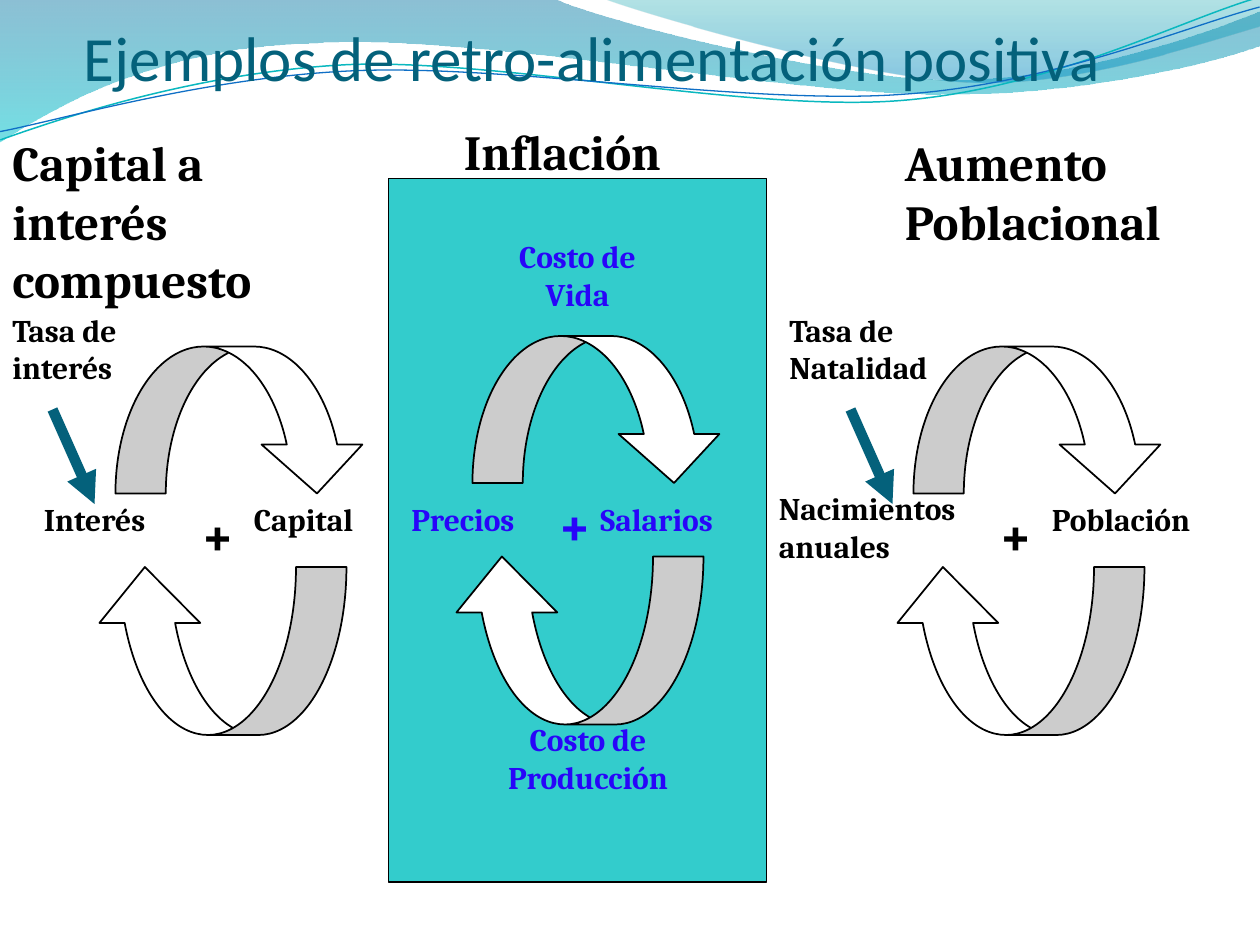
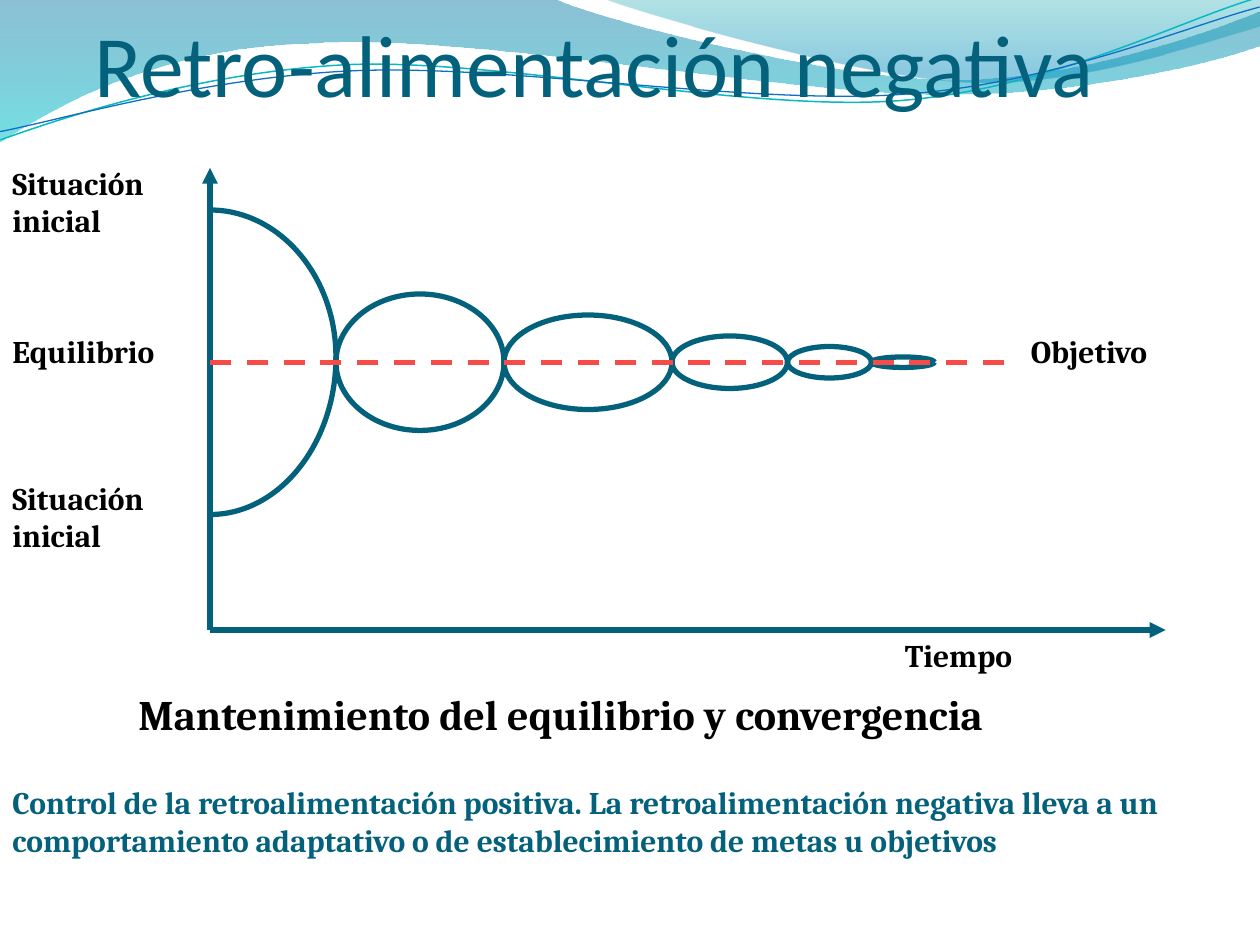
"""Build two slides on positive and negative feedback loops."""
from dataclasses import dataclass

from lxml.etree import SubElement
from pptx import Presentation
from pptx.dml.color import RGBColor
from pptx.enum.dml import MSO_LINE
from pptx.enum.shapes import MSO_CONNECTOR as Connector, MSO_SHAPE as Preset
from pptx.enum.text import MSO_ANCHOR as Anchor, PP_ALIGN as Align
from pptx.oxml.ns import qn
from pptx.util import Pt

EMU_PER_PX = 7620
ROUNDNESS = 0.55


@dataclass(frozen=True)
class Theme:
    """Colours, fonts and type sizes."""
    teal: str = "04617B"
    black: str = "000000"
    white: str = "FFFFFF"
    panel: str = "33CCCC"
    violet: str = "2805F9"
    red: str = "F74B47"
    title_font: str = "Calibri"
    body_font: str = "Cambria"
    label: int = 18
    caption: int = 24
    heading: int = 28
    plus: int = 32


THEME = Theme()

BROAD_WAVE = [
    (528, -1), (571, 20, 797, 76, 910, 76), (1024, 76, 1150, 31, 1200, 11),
    (1201, 43), (1180, 53, 1044, 91, 895, 90), (746, 90, 458, 34, 308, 41),
    (155, 43, 55, 100, -1, 136), (0, 0)]
RIGHT_WAVE = [
    (611, 13, 818, 74, 923, 78), (1027, 83, 1153, 38, 1200, 25), (1200, 0), (575, -1)]
AQUA_STRAND = [
    (57, 87, 190, 49, 333, 49), (475, 50, 710, 112, 854, 108),
    (999, 104, 1128, 43, 1201, 26)]
BLUE_STRAND = [
    (55, 89, 197, 54, 340, 55), (485, 56, 715, 106, 859, 102),
    (1002, 99, 1131, 50, 1202, 35)]


def px(length):
    """Convert px to EMU."""
    return round(length * EMU_PER_PX)


def color(value):
    """Turn a hex string into a colour."""
    return RGBColor.from_string(value)


def add_outline(slide, start, segments, close=False):
    """Draw a freeform of straight (x, y) and cubic (six number) segments."""
    points = [(px(segment[i]), px(segment[i + 1]))
              for segment in segments for i in range(0, len(segment), 2)]
    builder = slide.shapes.build_freeform(*map(px, start))
    builder.add_line_segments(points, close=close)
    shape = builder.convert_to_shape()
    shape.shadow.inherit = False
    nodes = iter(list(shape._element.iter(qn("a:lnTo"))))
    for segment in segments:
        node = next(nodes)
        if len(segment) == 6:
            node.tag = qn("a:cubicBezTo")
            for _ in range(2):
                extra = next(nodes)
                node.append(extra[0])
                extra.getparent().remove(extra)
    return shape


def add_wave(slide, start, segments, stops):
    """Draw a wave with a translucent vertical gradient."""
    shape = add_outline(slide, start, segments, close=True)
    shape.line.fill.background()
    shape.fill.gradient()
    shape.fill.gradient_angle = 270
    for stop, (position, value, _) in zip(shape.fill.gradient_stops, stops):
        stop.position = position
        stop.color.rgb = color(value)
    for node, (_, _, opacity) in zip(shape._element.iter(qn("a:srgbClr")), stops):
        SubElement(node, qn("a:alpha")).set("val", str(opacity * 1000))


def style_line(line, value, width):
    """Set the colour and width of a line."""
    line.color.rgb = color(value)
    line.width = Pt(width)


def add_curve(slide, start, segments, value=THEME.teal, width=3):
    """Draw an open unfilled curve."""
    shape = add_outline(slide, start, segments)
    shape.fill.background()
    style_line(shape.line, value, width)
    return shape


def add_text(slide, text, box, size=THEME.label, value=THEME.black, align=Align.LEFT,
             font=THEME.body_font, bold=True):
    """Add a wrapped text box with one paragraph."""
    shape = slide.shapes.add_textbox(*map(px, box))
    frame = shape.text_frame
    frame.word_wrap = True
    frame.text = text
    paragraph = frame.paragraphs[0]
    paragraph.alignment = align
    run_font = paragraph.runs[0].font
    run_font.name, run_font.size, run_font.bold = font, Pt(size), bold
    run_font.color.rgb = color(value)
    return frame


def add_title(slide, text, box, size):
    """Add the slide title, set on the bottom of its box."""
    frame = add_text(slide, text, box, size, THEME.teal, font=THEME.title_font, bold=False)
    frame.vertical_anchor = Anchor.BOTTOM
    frame.margin_left = frame.margin_right = frame.margin_bottom = 0


def add_preset(slide, preset, box, fill, adjustments=()):
    """Add a filled preset shape with a thin black line."""
    shape = slide.shapes.add_shape(preset, *map(px, box))
    shape.shadow.inherit = False
    for index, adjustment in enumerate(adjustments):
        shape.adjustments[index] = adjustment
    shape.fill.solid()
    shape.fill.fore_color.rgb = color(fill)
    style_line(shape.line, THEME.black, 1)
    return shape


def add_line(slide, start, end, value=THEME.teal, width=3, arrow=True, dash=None):
    """Add a straight line, with an arrowhead at its end if asked."""
    line = slide.shapes.add_connector(Connector.STRAIGHT, *map(px, start + end))
    style_line(line.line, value, width)
    if dash:
        line.line.dash_style = dash
    properties = line._element.spPr
    if arrow:
        SubElement(properties.find(qn("a:ln")), qn("a:tailEnd")).set("type", "triangle")
    SubElement(properties, qn("a:effectLst"))


def falling_quarter(x, y, width, height):
    """Return the cubic from the crest at x, y to the side of an ellipse."""
    return (x + width * ROUNDNESS, y, x + width, y + height * (1 - ROUNDNESS),
            x + width, y + height)


def add_half_lobe(slide, left, goal, width, reach):
    """Draw half an ellipse from the goal line, downward if reach is positive."""
    radius, crest = width / 2, goal + reach
    rise = (left, goal + reach * ROUNDNESS, left + radius * (1 - ROUNDNESS), crest,
            left + radius, crest)
    fall = falling_quarter(left + radius, crest, radius, -reach)
    add_curve(slide, (left, goal - reach * 0.08), [(left, goal), rise, fall])


def add_loop(slide, x, y, value=THEME.black):
    """Add two curved arrows turning around a plus sign."""
    add_preset(slide, Preset.CURVED_DOWN_ARROW, (x, y, 240, 140), THEME.white,
               (0.343, 0.686, 0.333))
    upward = add_preset(slide, Preset.CURVED_UP_ARROW, (x - 20, y + 210, 240, 160),
                        THEME.white, (0.3, 0.6, 0.333))
    upward._element.spPr.find(qn("a:xfrm")).set("flipH", "1")
    add_text(slide, "+", (x + 70, y + 140, 60, 75), THEME.plus, value)


def add_rate_arrow(slide, x, y):
    """Add the thick arrow that feeds a loop from its rate."""
    add_line(slide, (x - 60, y + 60), (x - 20, y + 150), width=6)


def add_slide(presentation):
    """Add a blank slide with the wave band."""
    slide = presentation.slides.add_slide(presentation.slide_layouts[6])
    add_wave(slide, (0, 0), BROAD_WAVE, [(0, "0074A1", 45), (1, "00C6CF", 55)])
    add_wave(slide, (575, -1), RIGHT_WAVE, [(0, "00A1A9", 30), (0.8, "008BBF", 45)])
    for start, strand, value, width in (((-2, 105), AQUA_STRAND, "0AB8BF", 0.85),
                                        ((-2, 97), BLUE_STRAND, "0F6FC6", 0.75)):
        add_curve(slide, start, strand, value, width).rotation = 357.3
    return slide


def build_positive(presentation):
    """Build the slide with three reinforcing loops."""
    slide = add_slide(presentation)
    add_preset(slide, Preset.RECTANGLE, (370, 170, 360, 670), THEME.panel)
    add_title(slide, "Ejemplos de retro-alimentación positiva", (80, 0, 1020, 90), 36)
    for x, y, value in ((110, 330, THEME.black), (870, 330, THEME.black),
                        (450, 320, THEME.violet)):
        add_loop(slide, x, y, value)
    for x in (110, 870):
        add_rate_arrow(slide, x, 330)
    for text, box in (("Capital a interés compuesto", (0, 120, 360, 124)),
                      ("Inflación", (430, 110, 280, 68)),
                      ("Aumento Poblacional", (850, 120, 310, 124))):
        add_text(slide, text, box, THEME.heading)
    for text, box in (("Tasa de interés", (0, 290, 180, 108)),
                      ("Interés", (30, 470, 150, 60)),
                      ("Capital", (230, 470, 210, 60)),
                      ("Tasa de Natalidad", (740, 290, 200, 108)),
                      ("Nacimientos anuales", (730, 460, 250, 108)),
                      ("Población", (990, 470, 210, 60))):
        add_text(slide, text, box)
    for text, box, align in (("Precios", (380, 470, 170, 60), Align.LEFT),
                             ("Salarios", (560, 470, 190, 60), Align.LEFT),
                             ("Costo de Vida", (460, 220, 180, 108), Align.CENTER),
                             ("Costo de Producción", (450, 680, 220, 108), Align.CENTER)):
        add_text(slide, text, box, value=THEME.violet, align=align)


def build_negative(presentation):
    """Build the slide with the oscillation converging on its goal."""
    slide = add_slide(presentation)
    add_title(slide, "Retro-alimentación negativa", (90, 0, 1020, 110), 50)
    origin, goal = (200, 600), 345
    add_line(slide, origin, (1110, 600))
    add_line(slide, origin, (200, 160))
    add_curve(slide, (200, 200), [falling_quarter(200, 200, 120, 140)])
    add_curve(slide, (198, 490), [(200, 490), falling_quarter(200, 490, 120, -150)])
    left = 320
    for width, reach in ((160, 65), (160, 45), (110, 25), (80, 15), (60, 5)):
        add_half_lobe(slide, left, goal, width, reach)
        add_half_lobe(slide, left, goal, width, -reach)
        left += width
    add_line(slide, (200, goal), (960, goal), THEME.red, arrow=False, dash=MSO_LINE.DASH)
    for text, box in (("Situación inicial", (0, 150, 190, 108)),
                      ("Equilibrio", (0, 310, 260, 60)),
                      ("Situación inicial", (0, 450, 190, 108)),
                      ("Objetivo", (970, 310, 180, 60)),
                      ("Tiempo", (850, 600, 270, 60))):
        add_text(slide, text, box)
    add_text(slide, "Mantenimiento del equilibrio y convergencia",
             (120, 650, 1000, 60), THEME.caption)
    add_text(slide, "Control de la retroalimentación positiva. La retroalimentación "
             "negativa lleva a un comportamiento adaptativo o de establecimiento de "
             "metas u objetivos", (0, 740, 1200, 156), value=THEME.teal)


def main():
    """Build and save the presentation."""
    presentation = Presentation()
    presentation.slide_width, presentation.slide_height = px(1200), px(900)
    build_positive(presentation)
    build_negative(presentation)
    presentation.save("out.pptx")


if __name__ == "__main__":
    main()
